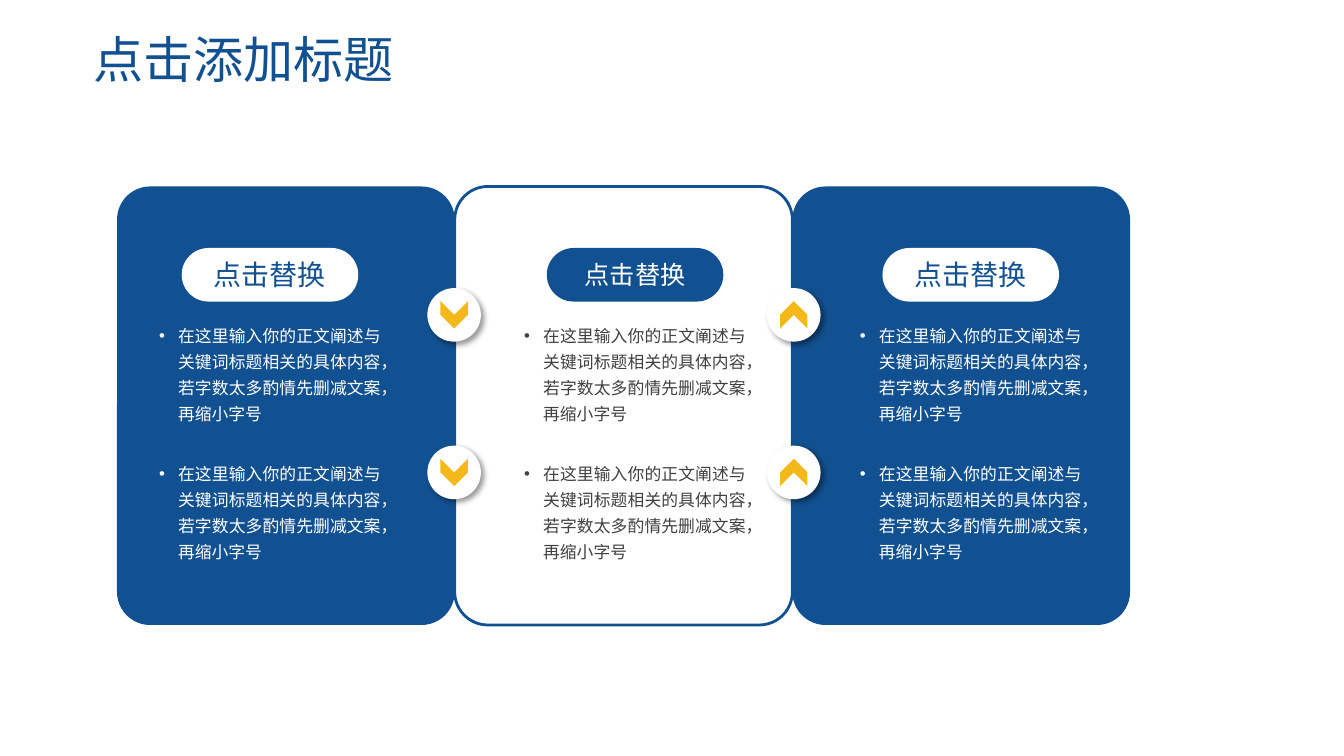
from dataclasses import dataclass

from lxml import etree
from pptx import Presentation
from pptx.dml.color import RGBColor
from pptx.enum.shapes import MSO_SHAPE
from pptx.enum.text import MSO_ANCHOR, MSO_AUTO_SIZE, PP_ALIGN
from pptx.oxml import parse_xml
from pptx.oxml.ns import nsdecls, qn
from pptx.util import Cm, Pt

ROUNDED, OVAL, CHEVRON = MSO_SHAPE.ROUNDED_RECTANGLE, MSO_SHAPE.OVAL, MSO_SHAPE.CHEVRON
TOP, MIDDLE = MSO_ANCHOR.TOP, MSO_ANCHOR.MIDDLE
LEFT, CENTER, JUSTIFY = PP_ALIGN.LEFT, PP_ALIGN.CENTER, PP_ALIGN.JUSTIFY
FIXED, GROW = MSO_AUTO_SIZE.NONE, MSO_AUTO_SIZE.SHAPE_TO_FIT_TEXT


@dataclass(frozen=True)
class Theme:
    font: str = "Noto Sans CJK SC"
    blue: str = "125191"
    white: str = "FFFFFF"
    gold: str = "F4B919"
    gray: str = "404040"
    title: float = 35.8
    label: float = 20
    label_small: float = 18
    body: float = 12


TITLE = "点击添加标题"
LABEL = "点击替换"
BODY = "在这里输入你的正文阐述与关键词标题相关的具体内容，若字数太多酌情先删减文案，再缩小字号"

CARD_LEFT, CARD_TOP, CARD_WIDTH, CARD_HEIGHT = 2.95, 4.7, 8.51, 11.05
PILL_OFFSET, PILL_TOP, PILL_WIDTH, PILL_HEIGHT = 0.57, 6.25, 4.45, 1.35
BODY_TOPS, BODY_WIDTH, BODY_HEIGHT = (8.05, 11.53), 5.59, 2.59
DISC_TOPS, DISC_SIZE, CHEVRON_SIZE = (7.26, 11.23), 1.35, 0.69

SHADOW = (
    f'<a:effectLst {nsdecls("a")}>'
    f'<a:outerShdw blurRad="{Pt(4)}" dist="{Pt(3)}" dir="2700000" algn="tl" rotWithShape="0">'
    '<a:srgbClr val="000000"><a:alpha val="40000"/></a:srgbClr>'
    "</a:outerShdw></a:effectLst>"
)


class SlideBuilder:
    def __init__(self, slide, theme):
        self.slide = slide
        self.theme = theme

    def fill_text(self, shape, text, size, color, paragraph_format, frame_format):
        frame = shape.text_frame
        for name, value in frame_format.items():
            setattr(frame, name, value)
        paragraph = frame.paragraphs[0]
        for name, value in paragraph_format.items():
            setattr(paragraph, name, value)
        run = paragraph.add_run()
        run.text = text
        run.font.size = Pt(size)
        run.font.color.rgb = RGBColor.from_string(color)
        run.font.name = self.theme.font
        east_asian = etree.SubElement(run.font._element, qn("a:ea"))
        east_asian.set("typeface", self.theme.font)
        return paragraph

    def title(self, text):
        shape = self.slide.shapes.title
        place = {"left": 2.11, "top": 0.89, "width": 29.21, "height": 1.27}
        for name, value in place.items():
            setattr(shape, name, Cm(value))
        self.fill_text(
            shape, text, self.theme.title, self.theme.blue,
            {"alignment": LEFT, "line_spacing": 0.9},
            {"auto_size": FIXED, "word_wrap": True, "vertical_anchor": TOP,
             "margin_top": 0, "margin_bottom": 0},
        )

    def shape(self, kind, left, top, width, height, fill, line=None, corner=None, rotation=0):
        shape = self.slide.shapes.add_shape(kind, Cm(left), Cm(top), Cm(width), Cm(height))
        shape.shadow.inherit = False
        shape.rotation = rotation
        shape.fill.solid()
        shape.fill.fore_color.rgb = RGBColor.from_string(fill)
        if line:
            shape.line.color.rgb = RGBColor.from_string(line)
            shape.line.width = Pt(2)
        else:
            shape.line.fill.background()
        if corner is not None:
            shape.adjustments[0] = corner
        return shape

    def pill(self, left, text, size, fill, color):
        shape = self.shape(ROUNDED, left, PILL_TOP, PILL_WIDTH, PILL_HEIGHT, fill, corner=0.5)
        self.fill_text(shape, text, size, color, {"alignment": CENTER},
                       {"word_wrap": True, "vertical_anchor": MIDDLE})

    def bullet_text(self, left, top, text, color):
        box = self.slide.shapes.add_textbox(Cm(left), Cm(top), Cm(BODY_WIDTH), Cm(BODY_HEIGHT))
        margins = dict.fromkeys(("margin_left", "margin_top", "margin_right", "margin_bottom"), 0)
        paragraph = self.fill_text(
            box, text, self.theme.body, color,
            {"alignment": JUSTIFY, "line_spacing": 1.3},
            {"word_wrap": True, "auto_size": GROW, **margins},
        )
        properties = paragraph._p.get_or_add_pPr()
        properties.set("marL", str(Cm(0.48)))
        properties.set("indent", str(-Cm(0.48)))
        etree.SubElement(properties, qn("a:buFont")).set("typeface", "Arial")
        etree.SubElement(properties, qn("a:buChar")).set("char", "•")

    def arrow_disc(self, left, top, rotation):
        disc = self.shape(OVAL, left, top, DISC_SIZE, DISC_SIZE, self.theme.white)
        properties = disc._element.spPr
        properties.remove(properties.find(qn("a:effectLst")))
        properties.append(parse_xml(SHADOW))
        inset = (DISC_SIZE - CHEVRON_SIZE) / 2
        self.shape(CHEVRON, left + inset, top + inset, CHEVRON_SIZE, CHEVRON_SIZE,
                   self.theme.gold, rotation=rotation)


def main():
    presentation = Presentation()
    presentation.slide_width, presentation.slide_height = Cm(33.87), Cm(19.05)
    theme = Theme()
    slide = presentation.slides.add_slide(presentation.slide_layouts[5])
    builder = SlideBuilder(slide, theme)
    builder.title(TITLE)

    # text left, card fill, card line, pill fill, label colour, label size, body colour
    blue_card = (theme.blue, None, theme.white, theme.blue, theme.label, theme.white)
    white_card = (theme.white, theme.blue, theme.blue, theme.white, theme.label_small, theme.gray)
    columns = [(4.01, *blue_card), (13.21, *white_card), (21.67, *blue_card)]

    for index, (left, fill, line, pill_fill, label_color, size, body_color) in enumerate(columns):
        builder.shape(ROUNDED, CARD_LEFT + index * CARD_WIDTH, CARD_TOP, CARD_WIDTH, CARD_HEIGHT,
                      fill, line, corner=0.098)
        builder.pill(left + PILL_OFFSET, LABEL, size, pill_fill, label_color)
        for top in BODY_TOPS:
            builder.bullet_text(left, top, BODY, body_color)

    for left, rotation in ((10.77, 90), (19.33, 270)):
        for top in DISC_TOPS:
            builder.arrow_disc(left, top, rotation)

    presentation.save("out.pptx")


if __name__ == "__main__":
    main()
